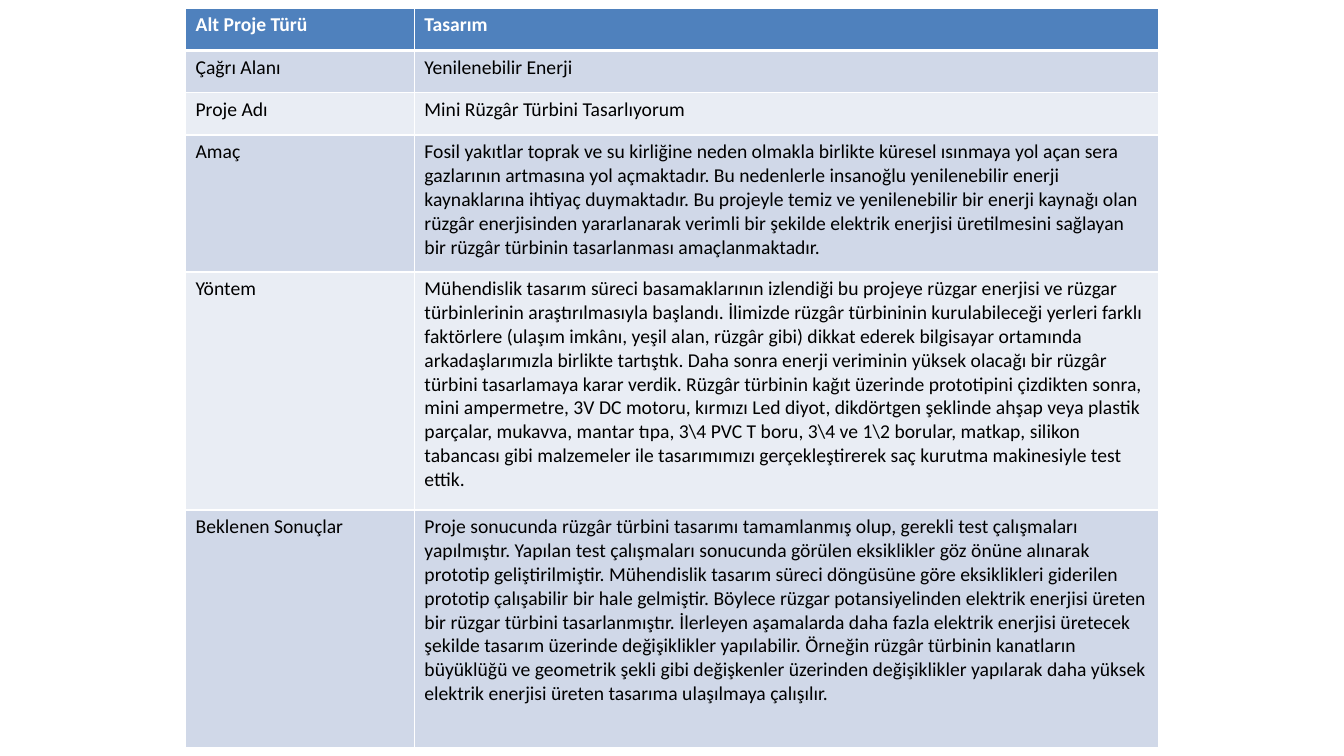
from lxml.etree import SubElement
from pptx import Presentation
from pptx.dml.color import RGBColor
from pptx.oxml.ns import qn
from pptx.util import Inches, Pt

WHITE = RGBColor(0xFF, 0xFF, 0xFF)
BLACK = RGBColor(0, 0, 0)
HEADER_BLUE = RGBColor(0x4F, 0x81, 0xBD)
BAND_DARK = RGBColor(0xD0, 0xD8, 0xE8)
BAND_LIGHT = RGBColor(0xE9, 0xED, 0xF4)

COLUMN_WIDTHS = (2.27, 7.38)
ROW_HEIGHTS = (0.42, 0.42, 0.42, 1.36, 2.36, 2.36)

PROJECT_ROWS = (
    ("Alt Proje Türü", "Tasarım"),
    ("Çağrı Alanı", "Yenilenebilir Enerji"),
    ("Proje Adı", "Mini Rüzgâr Türbini Tasarlıyorum"),
    ("Amaç",
     "Fosil yakıtlar toprak ve su kirliğine neden olmakla birlikte küresel ısınmaya yol açan sera "
     "gazlarının artmasına yol açmaktadır. Bu nedenlerle insanoğlu yenilenebilir enerji "
     "kaynaklarına ihtiyaç duymaktadır. Bu projeyle temiz ve yenilenebilir bir enerji kaynağı olan "
     "rüzgâr enerjisinden yararlanarak verimli bir şekilde elektrik enerjisi üretilmesini sağlayan "
     "bir rüzgâr türbinin tasarlanması amaçlanmaktadır."),
    ("Yöntem",
     "Mühendislik tasarım süreci basamaklarının izlendiği bu projeye rüzgar enerjisi ve rüzgar "
     "türbinlerinin araştırılmasıyla başlandı. İlimizde rüzgâr türbininin kurulabileceği yerleri farklı "
     "faktörlere (ulaşım imkânı, yeşil alan, rüzgâr gibi) dikkat ederek bilgisayar ortamında "
     "arkadaşlarımızla birlikte tartıştık. Daha sonra enerji veriminin yüksek olacağı bir rüzgâr "
     "türbini tasarlamaya karar verdik. Rüzgâr türbinin kağıt üzerinde prototipini çizdikten sonra, "
     "mini ampermetre, 3V DC motoru, kırmızı Led diyot, dikdörtgen şeklinde ahşap veya plastik "
     r"parçalar, mukavva, mantar tıpa, 3\4 PVC T boru, 3\4 ve 1\2 borular, matkap, silikon "
     "tabancası gibi malzemeler ile tasarımımızı gerçekleştirerek saç kurutma makinesiyle test "
     "ettik."),
    ("Beklenen Sonuçlar",
     "Proje sonucunda rüzgâr türbini tasarımı tamamlanmış olup, gerekli test çalışmaları "
     "yapılmıştır. Yapılan test çalışmaları sonucunda görülen eksiklikler göz önüne alınarak "
     "prototip geliştirilmiştir. Mühendislik tasarım süreci döngüsüne göre eksiklikleri giderilen "
     "prototip çalışabilir bir hale gelmiştir. Böylece rüzgar potansiyelinden elektrik enerjisi üreten "
     "bir rüzgar türbini tasarlanmıştır. İlerleyen aşamalarda daha fazla elektrik enerjisi üretecek "
     "şekilde tasarım üzerinde değişiklikler yapılabilir. Örneğin rüzgâr türbinin kanatların "
     "büyüklüğü ve geometrik şekli gibi değişkenler üzerinden değişiklikler yapılarak daha yüksek "
     "elektrik enerjisi üreten tasarıma ulaşılmaya çalışılır."),
)


def set_borders(cell, top, bottom):
    properties = cell._tc.get_or_add_tcPr()
    for side, width in (("L", 1), ("R", 1), ("T", top), ("B", bottom)):
        line = SubElement(properties, qn(f"a:ln{side}"), w=str(Pt(width)))
        fill = SubElement(line, qn("a:solidFill"))
        SubElement(fill, qn("a:srgbClr"), val=str(WHITE))


def format_cell(cell, text, row_index):
    is_header = row_index == 0
    set_borders(cell, top=3 if row_index == 1 else 1, bottom=3 if is_header else 1)
    cell.fill.solid()
    band = BAND_DARK if row_index % 2 else BAND_LIGHT
    cell.fill.fore_color.rgb = HEADER_BLUE if is_header else band
    run = cell.text_frame.paragraphs[0].add_run()
    run.text = text
    run.font.name = "Calibri"
    run.font.size = Pt(14)
    run.font.bold = is_header
    run.font.color.rgb = WHITE if is_header else BLACK


def add_project_table(slide, left, top, width, height):
    shape = slide.shapes.add_table(len(PROJECT_ROWS), len(COLUMN_WIDTHS),
                                   Inches(left), Inches(top), Inches(width), Inches(height))
    table = shape.table
    for column, share in zip(table.columns, COLUMN_WIDTHS):
        column.width = Inches(width * share / sum(COLUMN_WIDTHS))
    for row, share in zip(table.rows, ROW_HEIGHTS):
        row.height = Inches(height * share / sum(ROW_HEIGHTS))
    for row_index, texts in enumerate(PROJECT_ROWS):
        for column_index, text in enumerate(texts):
            format_cell(table.cell(row_index, column_index), text, row_index)


def main():
    presentation = Presentation()
    presentation.slide_width = Inches(13.33)
    presentation.slide_height = Inches(7.5)
    slide = presentation.slides.add_slide(presentation.slide_layouts[6])
    add_project_table(slide, 1.84, 0.08, 9.65, 7.34)
    presentation.save("out.pptx")


if __name__ == "__main__":
    main()
